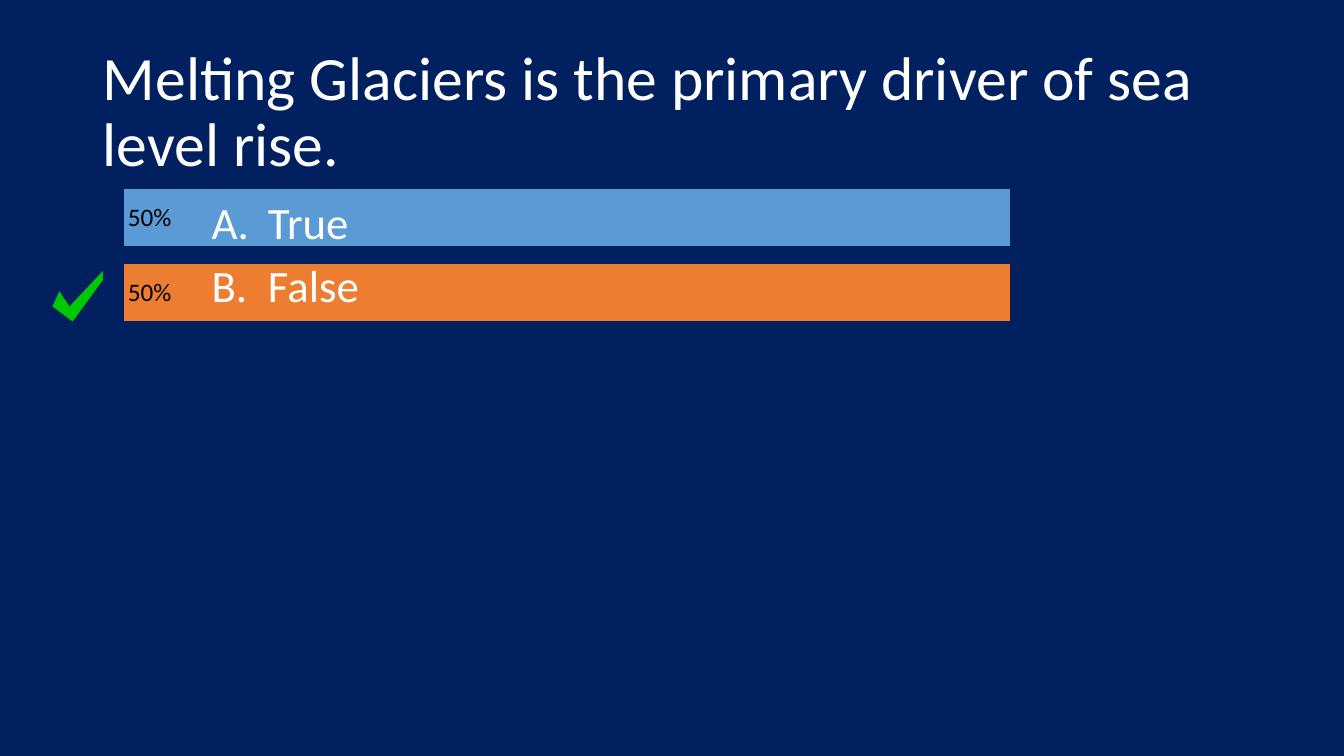
import pptx
import pptx.chart.data
import pptx.dml.color
import pptx.enum.chart
import pptx.enum.text
import pptx.oxml
import pptx.oxml.ns
import pptx.util
from pptx.util import Inches

FONT = "Calibri"
COLORS = {
    "background": "002060",
    "text": "FFFFFF",
    "label": "000000",
    "true": "5B9BD5",
    "false": "ED7D31",
    "check": "00C800",
}
ANSWERS = {"True": 0.5, "False": 0.5}
CHECK_POINTS = [(0.59, 2.89), (0.52, 3.04), (0.72, 3.19),
                (1.02, 2.78), (1.02, 2.69), (0.69, 3.04)]


def color(name):
    return pptx.dml.color.RGBColor.from_string(COLORS[name])


def paint(fill, name):
    fill.solid()
    fill.fore_color.rgb = color(name)


def style_font(font, size, name):
    font.name = FONT
    font.size = pptx.util.Pt(size)
    font.color.rgb = color(name)


def set_title(slide, text):
    title = slide.shapes.title
    title.left, title.top = Inches(0.92), Inches(0.4)
    title.width, title.height = Inches(11.5), Inches(1.45)
    frame = title.text_frame
    frame.word_wrap = True
    frame.auto_size = pptx.enum.text.MSO_AUTO_SIZE.NONE
    frame.vertical_anchor = pptx.enum.text.MSO_ANCHOR.MIDDLE
    para = frame.paragraphs[0]
    para.alignment = pptx.enum.text.PP_ALIGN.LEFT
    para.line_spacing = 0.9
    span = para.add_run()
    span.text = text
    style_font(span.font, 44, "text")


def hide_axis(axis):
    """Keep the axis for scaling but show no line, labels or gridlines."""
    axis.has_major_gridlines = False
    axis.tick_label_position = pptx.enum.chart.XL_TICK_LABEL_POSITION.NONE
    axis.format.line.fill.background()


def fix_plot_area(chart, x, y, w, h):
    """Set the inner plot area as fractions of the chart frame."""
    plot_area = chart.plots[0]._element.getparent()
    for old in plot_area.findall(pptx.oxml.ns.qn("c:layout")):
        plot_area.remove(old)
    sizes = "".join(f'<c:{tag} val="{value}"/>'
                    for tag, value in zip("xywh", (x, y, w, h)))
    plot_area.insert(0, pptx.oxml.parse_xml(
        f'<c:layout {pptx.oxml.ns.nsdecls("c")}><c:manualLayout>'
        '<c:layoutTarget val="inner"/><c:xMode val="edge"/><c:yMode val="edge"/>'
        f'{sizes}</c:manualLayout></c:layout>'))


def add_poll_chart(slide):
    data = pptx.chart.data.CategoryChartData(number_format="0%")
    data.categories = [str(number + 1) for number in range(len(ANSWERS))]
    data.add_series("Series 1", ANSWERS.values())
    chart = slide.shapes.add_chart(
        pptx.enum.chart.XL_CHART_TYPE.BAR_CLUSTERED,
        Inches(1.01), Inches(1.72), Inches(10.99), Inches(1.59), data).chart
    chart.has_legend = False
    chart.has_title = False
    style_font(chart.font, 18, "label")
    hide_axis(chart.category_axis)
    hide_axis(chart.value_axis)
    chart.category_axis.reverse_order = True
    chart.value_axis.minimum_scale = 0
    chart.value_axis.maximum_scale = 0.6
    fix_plot_area(chart, 0.02, 0.04, 0.96, 0.94)

    plot = chart.plots[0]
    plot.gap_width = 33
    plot.vary_by_categories = False
    for index, answer in enumerate(ANSWERS):
        paint(plot.series[0].points[index].format.fill, answer.lower())
    plot.has_data_labels = True
    labels = plot.data_labels
    labels.show_value = True
    labels.number_format = "0%"
    labels.number_format_is_linked = False
    labels.position = pptx.enum.chart.XL_LABEL_POSITION.INSIDE_BASE
    style_font(labels.font, 18, "label")


def number_with_letter(para):
    properties = para._p.get_or_add_pPr()
    properties.set("marL", str(Inches(0.56)))
    properties.set("indent", str(-Inches(0.56)))
    properties.append(pptx.oxml.parse_xml(
        f'<a:buFont {pptx.oxml.ns.nsdecls("a")} typeface="{FONT}"/>'))
    properties.append(pptx.oxml.parse_xml(
        f'<a:buAutoNum {pptx.oxml.ns.nsdecls("a")} type="alphaUcPeriod"/>'))


def add_answers(slide):
    box = slide.shapes.add_textbox(Inches(2), Inches(1.88), Inches(10.67), Inches(5.25))
    frame = box.text_frame
    frame.word_wrap = True
    for index, answer in enumerate(ANSWERS):
        para = frame.add_paragraph() if index else frame.paragraphs[0]
        para.space_before = pptx.util.Pt(6.4)
        number_with_letter(para)
        span = para.add_run()
        span.text = answer
        style_font(span.font, 32, "text")


def add_check_mark(slide):
    start, *rest = [(Inches(x), Inches(y)) for x, y in CHECK_POINTS]
    builder = slide.shapes.build_freeform(*start)
    builder.add_line_segments(rest, close=True)
    check = builder.convert_to_shape()
    check.shadow.inherit = False
    paint(check.fill, "check")
    check.line.fill.background()


def main():
    deck = pptx.Presentation()
    deck.slide_width, deck.slide_height = Inches(13.33), Inches(7.5)
    slide = deck.slides.add_slide(deck.slide_layouts.get_by_name("Title Only"))
    paint(slide.background.fill, "background")
    set_title(slide, "Melting Glaciers is the primary driver of sea level rise.")
    add_poll_chart(slide)
    add_answers(slide)
    add_check_mark(slide)
    deck.save("out.pptx")


if __name__ == "__main__":
    main()
